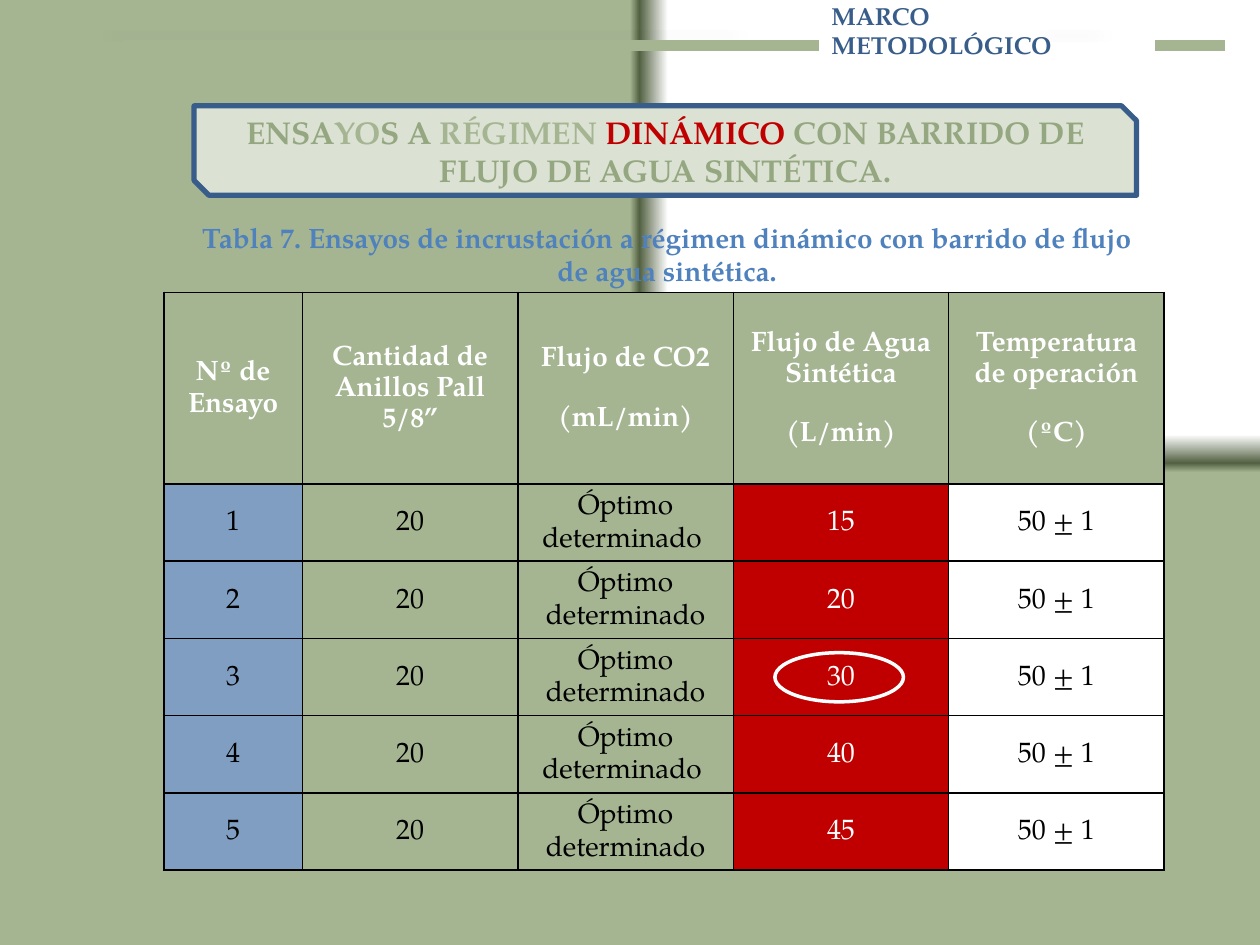
from pptx import Presentation
from pptx.dml.color import RGBColor
from pptx.enum.shapes import MSO_CONNECTOR, MSO_SHAPE
from pptx.enum.text import MSO_ANCHOR, PP_ALIGN
from pptx.oxml import parse_xml
from pptx.oxml.ns import nsdecls, qn
from pptx.util import Inches, Pt

FONT = "TeX Gyre Pagella"
SAGE, NAVY, RED, WHITE, BLACK = "A5B592", "385D8A", "C00000", "FFFFFF", "000000"
TITLE_STOPS = [(0, "AABA9A"), (49, "95A780"), (50, "899A75"), (92, "7A8869"), (100, "788668")]
BACKGROUND_STOPS = [(92, WHITE), (98, "536142"), (100, SAGE)]


def color(value):
    """Turn a hex string into a colour."""
    return RGBColor.from_string(value)


def gradient(stops, direction):
    """Return a gradient fill element with the given stops and direction markup."""
    items = "".join(
        f'<a:gs pos="{position * 1000}"><a:srgbClr val="{value}"/></a:gs>'
        for position, value in stops
    )
    return parse_xml(
        f'<a:gradFill {nsdecls("a")} rotWithShape="1"><a:gsLst>{items}</a:gsLst>{direction}</a:gradFill>'
    )


def style_run(run, size, value, bold=True):
    """Set the font of a run; a colour of None gives the heading gradient."""
    run.font.name, run.font.size, run.font.bold = FONT, Pt(size), bold
    if value:
        run.font.color.rgb = color(value)
    else:
        run._r.get_or_add_rPr().insert(0, gradient(TITLE_STOPS, '<a:lin ang="5400000"/>'))


def paint_background(slide):
    """Fill the slide with a gradient that spreads from the top right corner."""
    slide.background.fill.solid()
    properties = slide.element.find(".//" + qn("p:bgPr"))
    direction = '<a:path path="rect"><a:fillToRect l="100000" b="100000"/></a:path>'
    properties.replace(properties[0], gradient(BACKGROUND_STOPS, direction))


def add_text(slide, box, text, size, value, align, anchor):
    """Add a wrapped text box holding one paragraph."""
    frame = slide.shapes.add_textbox(*map(Inches, box)).text_frame
    frame.word_wrap = True
    frame.vertical_anchor = anchor
    frame.text = text
    paragraph = frame.paragraphs[0]
    paragraph.alignment = align
    style_run(paragraph.runs[0], size, value)


def add_rule(slide, start, end, top):
    """Draw a thick horizontal rule with a faint perspective shadow."""
    rule = slide.shapes.add_connector(
        MSO_CONNECTOR.STRAIGHT, Inches(start), Inches(top), Inches(end), Inches(top)
    )
    rule.line.color.rgb = color(SAGE)
    rule.line.width = Pt(6.5)
    rule._element.spPr.append(parse_xml(
        f'<a:effectLst {nsdecls("a")}><a:outerShdw blurRad="152400" dist="317500" dir="5400000" '
        'sx="90000" sy="-19000" rotWithShape="0"><a:srgbClr val="000000"><a:alpha val="15000"/>'
        '</a:srgbClr></a:outerShdw></a:effectLst>'
    ))


def add_header(slide, box):
    """Place the section title between its two rules."""
    left, top, width, height = box
    add_text(slide, box, "MARCO METODOLÓGICO", 14, NAVY, PP_ALIGN.LEFT, MSO_ANCHOR.BOTTOM)
    for start, end in ((0.98, left), (left + width, 9.72)):
        add_rule(slide, start, end, top + 0.19)


def add_banner(slide, box):
    """Place the framed heading with its multicoloured words."""
    banner = slide.shapes.add_shape(MSO_SHAPE.SNIP_2_DIAG_RECTANGLE, *map(Inches, box))
    banner.shadow.inherit = False
    banner.fill.solid()
    banner.fill.fore_color.rgb = color("DBE1D3")
    banner.line.color.rgb = color(NAVY)
    banner.line.width = Pt(3)
    banner.text_frame.vertical_anchor = MSO_ANCHOR.MIDDLE
    paragraph = banner.text_frame.paragraphs[0]
    paragraph.alignment = PP_ALIGN.CENTER
    pieces = [
        ("ENSA", None), ("YO", SAGE), ("S A ", None), ("RÉGIMEN ", SAGE), ("DINÁMICO", RED),
        (" CON BARRIDO DE FLUJO DE AGUA SINTÉTICA.", None),
    ]
    for text, value in pieces:
        run = paragraph.add_run()
        run.text = text
        style_run(run, 18, value)


def add_borders(cell):
    """Draw a thin black line on each side of a cell."""
    properties = cell._tc.get_or_add_tcPr()
    for side in ("lnL", "lnR", "lnT", "lnB"):
        properties.append(parse_xml(
            f'<a:{side} {nsdecls("a")} w="12700"><a:solidFill><a:srgbClr val="{BLACK}"/>'
            f'</a:solidFill></a:{side}>'
        ))


def fill_cell(cell, text, fill, value, bold):
    """Write and format one table cell."""
    add_borders(cell)
    if fill:
        cell.fill.solid()
        cell.fill.fore_color.rgb = color(fill)
    else:
        cell.fill.background()
    cell.vertical_anchor = MSO_ANCHOR.MIDDLE
    cell.margin_left = cell.margin_right = Inches(0.07)
    cell.margin_top = cell.margin_bottom = Inches(0)
    cell.text_frame.text = text
    for paragraph in cell.text_frame.paragraphs:
        paragraph.alignment = PP_ALIGN.CENTER
        paragraph.line_spacing = 1.15
        paragraph.space_before, paragraph.space_after = Pt(6), Pt(10)
        style_run(paragraph.runs[0], 16, value, bold)


def add_trials_table(slide, box):
    """Place the table of trials, one row for each water flow."""
    headers = [
        "Nº de Ensayo", "Cantidad de Anillos Pall 5/8”", "Flujo de CO2\n(mL/min)",
        "Flujo de Agua Sintética\n(L/min)", "Temperatura de operación\n(ºC)",
    ]
    water_flows = [15, 20, 30, 40, 45]
    optimum = "Óptimo determinado"
    fills = ["809EC2", None, None, RED, WHITE]
    inks = [BLACK, BLACK, BLACK, WHITE, BLACK]
    table = slide.shapes.add_table(len(water_flows) + 1, len(headers), *map(Inches, box)).table
    table.first_row = table.horz_banding = False
    for index, column in enumerate(table.columns):
        column.width = Inches(1.71 if index else 1.1)
    for index, row in enumerate(table.rows):
        row.height = Inches(0.59 if index else 1.52)
    for index, text in enumerate(headers):
        fill_cell(table.cell(0, index), text, SAGE, WHITE, True)
    for number, flow in enumerate(water_flows, 1):
        gas = optimum + " " if number in (1, 4) else optimum
        values = [str(number), "20", gas, str(flow), "50 ± 1"]
        for index, (text, fill, ink) in enumerate(zip(values, fills, inks)):
            fill_cell(table.cell(number, index), text, fill, ink, False)


def add_highlight(slide, box):
    """Ring the chosen water flow."""
    ring = slide.shapes.add_shape(MSO_SHAPE.OVAL, *map(Inches, box))
    ring.shadow.inherit = False
    ring.fill.background()
    ring.line.color.rgb = color(WHITE)
    ring.line.width = Pt(2)


def main():
    """Build the slide and save it."""
    presentation = Presentation()
    presentation.slide_width, presentation.slide_height = Inches(10), Inches(7.5)
    slide = presentation.slides.add_slide(presentation.slide_layouts[6])
    paint_background(slide)
    add_header(slide, (6.5, 0.17, 2.67, 0.35))
    add_banner(slide, (1.54, 0.84, 7.48, 0.71))
    add_trials_table(slide, (1.3, 2.32, 7.95, 4.59))
    caption = (
        "Tabla 7. Ensayos de incrustación a régimen dinámico con barrido de flujo de agua sintética."
    )
    add_text(slide, (1.36, 1.7, 7.87, 0.64), caption, 16, "4F81BD", PP_ALIGN.CENTER, MSO_ANCHOR.TOP)
    add_highlight(slide, (6.15, 5.18, 1.02, 0.39))
    presentation.save("out.pptx")


if __name__ == "__main__":
    main()
